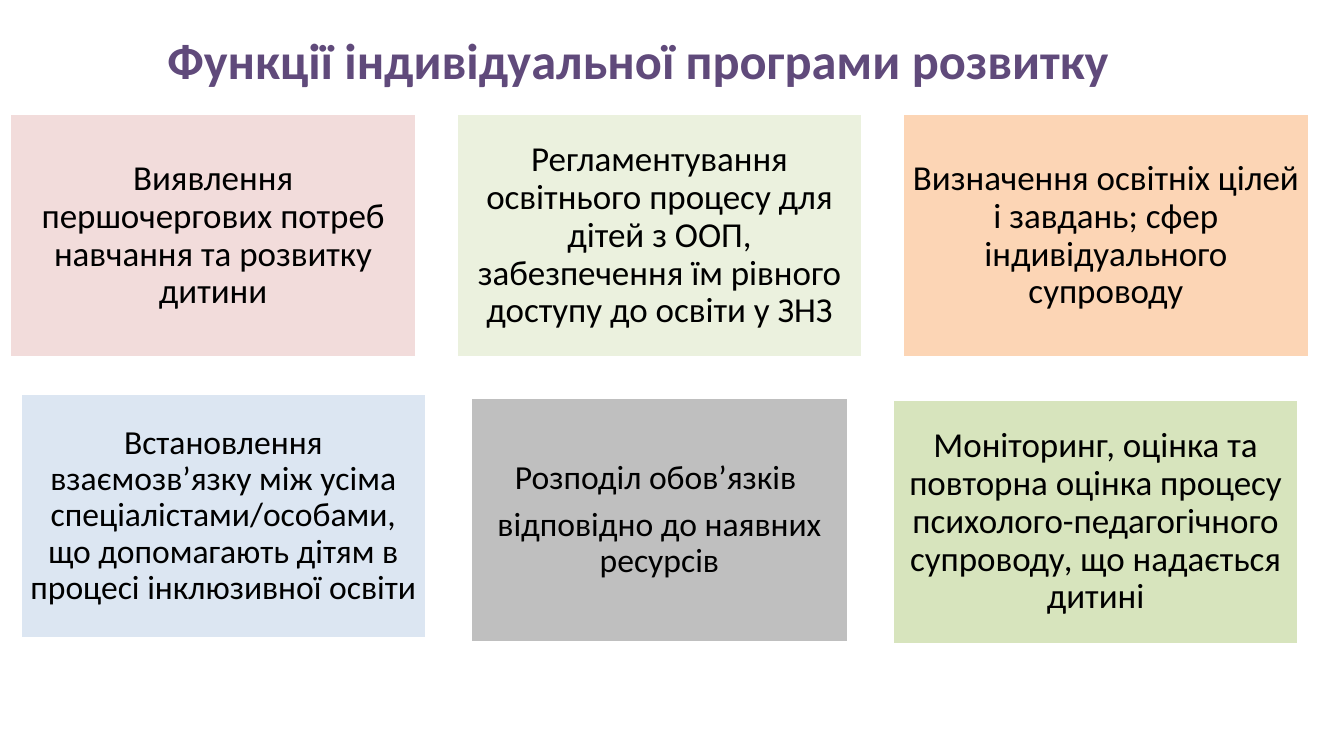
from pptx import Presentation
from pptx import util as u
from pptx.dml.color import RGBColor
from pptx.enum import shapes, text

TITLE = "Функції індивідуальної програми розвитку"
FONT = "Calibri"
CARD_W, CARD_H = 10.24, 6.15

# First card centre and step between centres (cm), then the cards:
# top (cm), width (cm), fill, text size (pt), paragraphs
ROWS = [
    (5.37, 11.25, [
        (2.87, CARD_W, "F2DCDB", 25,
         ["Виявлення першочергових потреб навчання та розвитку дитини"]),
        (2.87, CARD_W, "EBF1DE", 25,
         ["Регламентування освітнього процесу для дітей з ООП, "
          "забезпечення їм рівного доступу до освіти у ЗНЗ"]),
        (2.87, CARD_W, "FCD5B5", 25,
         ["Визначення освітніх цілей і завдань; сфер індивідуального супроводу"]),
    ]),
    (5.63, 10.99, [
        (9.93, CARD_W, "DCE6F2", 24,
         ["Встановлення взаємозв’язку між усіма спеціалістами/особами, "
          "що допомагають дітям в процесі інклюзивної освіти"]),
        (10.03, 9.53, "BFBFBF", 24,
         ["Розподіл обов’язків ", "відповідно до наявних ресурсів"]),
        (10.08, CARD_W, "D7E4BD", 25,
         ["Моніторинг, оцінка та повторна оцінка процесу "
          "психолого-педагогічного супроводу, що надається дитині"]),
    ]),
]


def rgb(value):
    return RGBColor.from_string(value)


def style_runs(p, size, color, bold=False):
    p.alignment = text.PP_ALIGN.CENTER
    for r in p.runs:
        r.font.name = FONT
        r.font.size = u.Pt(size)
        r.font.bold = bold
        r.font.color.rgb = rgb(color)


def add_title(s):
    sp = s.shapes.title
    sp.left, sp.top, sp.width, sp.height = map(u.Cm, (1.7, 0.53, 28.78, 1.93))
    tf = sp.text_frame
    tf.text = TITLE
    tf.vertical_anchor = text.MSO_ANCHOR.MIDDLE
    style_runs(tf.paragraphs[0], 36, "604A7B", bold=True)


def add_card(s, center, top, width, fill, size, lines):
    sp = s.shapes.add_shape(shapes.MSO_SHAPE.RECTANGLE, u.Cm(center - width / 2),
                            u.Cm(top), u.Cm(width), u.Cm(CARD_H))
    sp.shadow.inherit = False
    sp.fill.solid()
    sp.fill.fore_color.rgb = rgb(fill)
    sp.line.color.rgb = rgb("FFFFFF")
    sp.line.width = u.Pt(2)
    tf = sp.text_frame
    tf.word_wrap = True
    tf.vertical_anchor = text.MSO_ANCHOR.MIDDLE
    tf.margin_left = tf.margin_right = tf.margin_top = tf.margin_bottom = u.Cm(0.25)
    tf.text = "\n".join(lines)
    for p in tf.paragraphs:
        p.line_spacing = 0.9
        style_runs(p, size, "000000")
    for p in tf.paragraphs[:-1]:
        p.space_after = u.Pt(8)


def main():
    prs = Presentation()
    prs.slide_width, prs.slide_height = u.Cm(33.87), u.Cm(19.05)
    s = prs.slides.add_slide(prs.slide_layouts[5])
    add_title(s)
    for first_center, step, cards in ROWS:
        for i, card in enumerate(cards):
            add_card(s, first_center + i * step, *card)
    prs.save("out.pptx")


if __name__ == "__main__":
    main()
